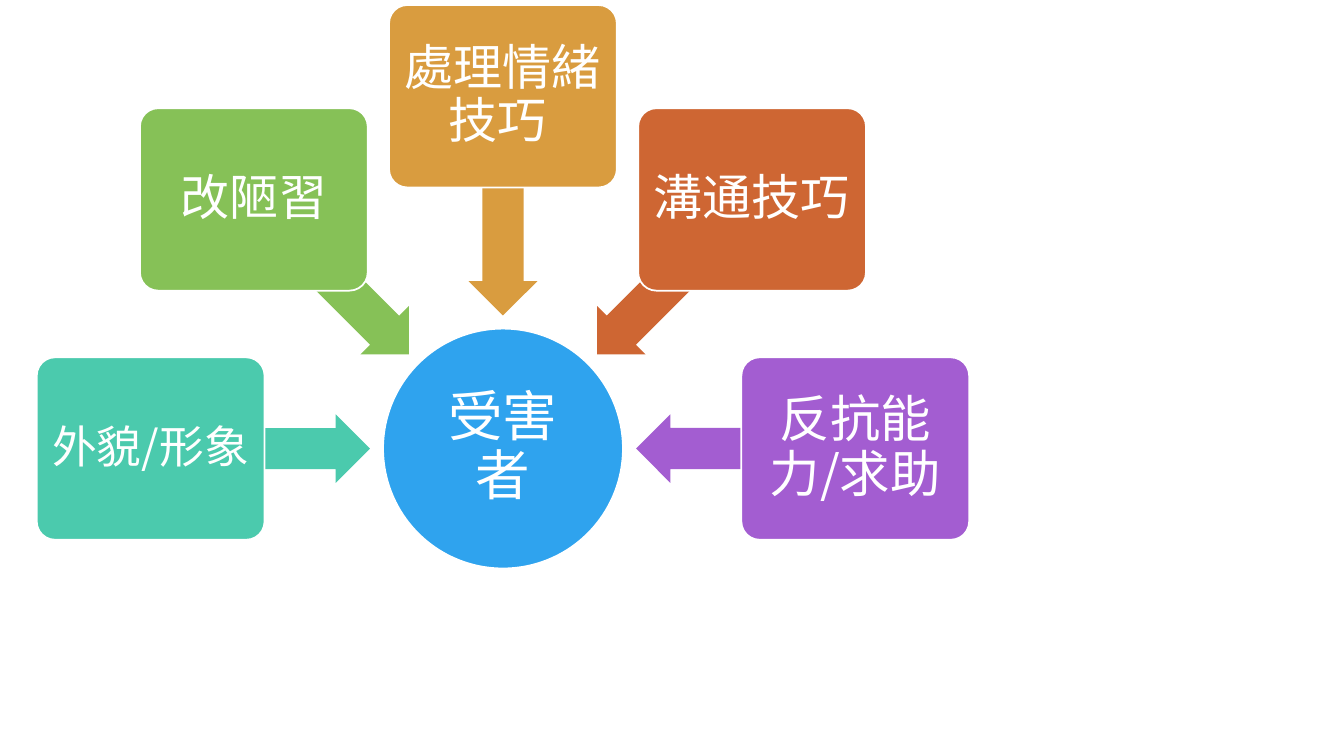
from dataclasses import dataclass
from math import cos, radians, sin

from pptx import Presentation
from pptx.dml.color import RGBColor
from pptx.enum.shapes import MSO_SHAPE
from pptx.enum.text import MSO_ANCHOR, PP_ALIGN
from pptx.oxml.ns import qn
from pptx.shapes.autoshape import Shape
from pptx.slide import Slide
from pptx.util import Inches, Length, Pt

# Grid of square cells, ten to the inch
SLIDE_COLUMNS, SLIDE_ROWS = 133.33, 75

WHITE = RGBColor(0xFF, 0xFF, 0xFF)
BLUE = RGBColor(0x2F, 0xA3, 0xEE)
TEAL = RGBColor(0x4B, 0xCA, 0xAD)
GREEN = RGBColor(0x86, 0xC1, 0x57)
AMBER = RGBColor(0xD9, 0x9C, 0x3F)
ORANGE = RGBColor(0xCE, 0x66, 0x33)
PURPLE = RGBColor(0xA3, 0x5D, 0xD1)
FONT = "Noto Sans CJK SC"

# Hub and the two rings around it, in grid cells
HUB_COLUMN, HUB_ROW, HUB_SIZE = 49.9, 44.5, 23.8
TOPIC_RADIUS, TOPIC_WIDTH, TOPIC_HEIGHT = 34.95, 22.6, 18.1
ARROW_RADIUS, ARROW_LENGTH, ARROW_HEIGHT = 24.1, 21.8, 6.8
HUB_MARGIN, TOPIC_MARGIN = 0.3, 0.7


@dataclass(frozen=True)
class Topic:
    text: str
    size: int
    color: RGBColor


TOPICS = [
    Topic("外貌/形象", 32, TEAL),
    Topic("改陋習", 35, GREEN),
    Topic("處理情緒技巧 ", 35, AMBER),
    Topic("溝通技巧", 35, ORANGE),
    Topic("反抗能力/求助", 36, PURPLE),
]
FIRST_ANGLE, ANGLE_STEP = 180, 45


def cells(count: float) -> Length:
    return Inches(count / 10)


def add_figure(page: Slide, kind: MSO_SHAPE, angle: float, radius: float,
               width: float, height: float, color: RGBColor) -> Shape:
    """Add a filled shape centred on a ring around the hub."""
    column = HUB_COLUMN + radius * cos(radians(angle))
    row = HUB_ROW + radius * sin(radians(angle))
    figure = page.shapes.add_shape(kind, cells(column - width / 2), cells(row - height / 2),
                                   cells(width), cells(height))
    figure.shadow.inherit = False
    figure.fill.solid()
    figure.fill.fore_color.rgb = color
    figure.line.fill.background()
    return figure


def outline(figure: Shape) -> None:
    figure.line.color.rgb = WHITE
    figure.line.width = Pt(1.25)


def write_text(figure: Shape, text: str, *, size: int, margin: float) -> None:
    frame = figure.text_frame
    frame.word_wrap = True
    frame.vertical_anchor = MSO_ANCHOR.MIDDLE
    frame.margin_left = frame.margin_right = cells(margin)
    frame.margin_top = frame.margin_bottom = cells(margin)
    para = frame.paragraphs[0]
    para.alignment = PP_ALIGN.CENTER
    para.line_spacing = 0.9
    span = para.add_run()
    span.text = text
    span.font.size = Pt(size)
    span.font.name = FONT
    span.font.color.rgb = WHITE
    # East Asian glyphs take their own typeface entry
    latin = span.font._element.find(qn("a:latin"))
    east_asian = latin.makeelement(qn("a:ea"), {"typeface": FONT})
    latin.addnext(east_asian)


def add_hub(page: Slide) -> None:
    hub = add_figure(page, MSO_SHAPE.OVAL, 0, 0, HUB_SIZE, HUB_SIZE, BLUE)
    outline(hub)
    write_text(hub, "受害者", size=39, margin=HUB_MARGIN)


def add_topic(page: Slide, topic: Topic, angle: float) -> None:
    # Arrow pointing to the hub
    arrow = add_figure(page, MSO_SHAPE.LEFT_ARROW, angle, ARROW_RADIUS,
                       ARROW_LENGTH, ARROW_HEIGHT, topic.color)
    arrow.adjustments[0] = 0.6
    arrow.adjustments[1] = 0.5
    arrow.rotation = angle

    # Box over the arrow's tail
    box = add_figure(page, MSO_SHAPE.ROUNDED_RECTANGLE, angle, TOPIC_RADIUS,
                     TOPIC_WIDTH, TOPIC_HEIGHT, topic.color)
    box.adjustments[0] = 0.1
    outline(box)
    write_text(box, topic.text, size=topic.size, margin=TOPIC_MARGIN)


def main() -> None:
    deck = Presentation()
    deck.slide_width, deck.slide_height = cells(SLIDE_COLUMNS), cells(SLIDE_ROWS)
    page = deck.slides.add_slide(deck.slide_layouts[6])
    add_hub(page)
    for index, topic in enumerate(TOPICS):
        add_topic(page, topic, FIRST_ANGLE + index * ANGLE_STEP)
    deck.save("out.pptx")


if __name__ == "__main__":
    main()
